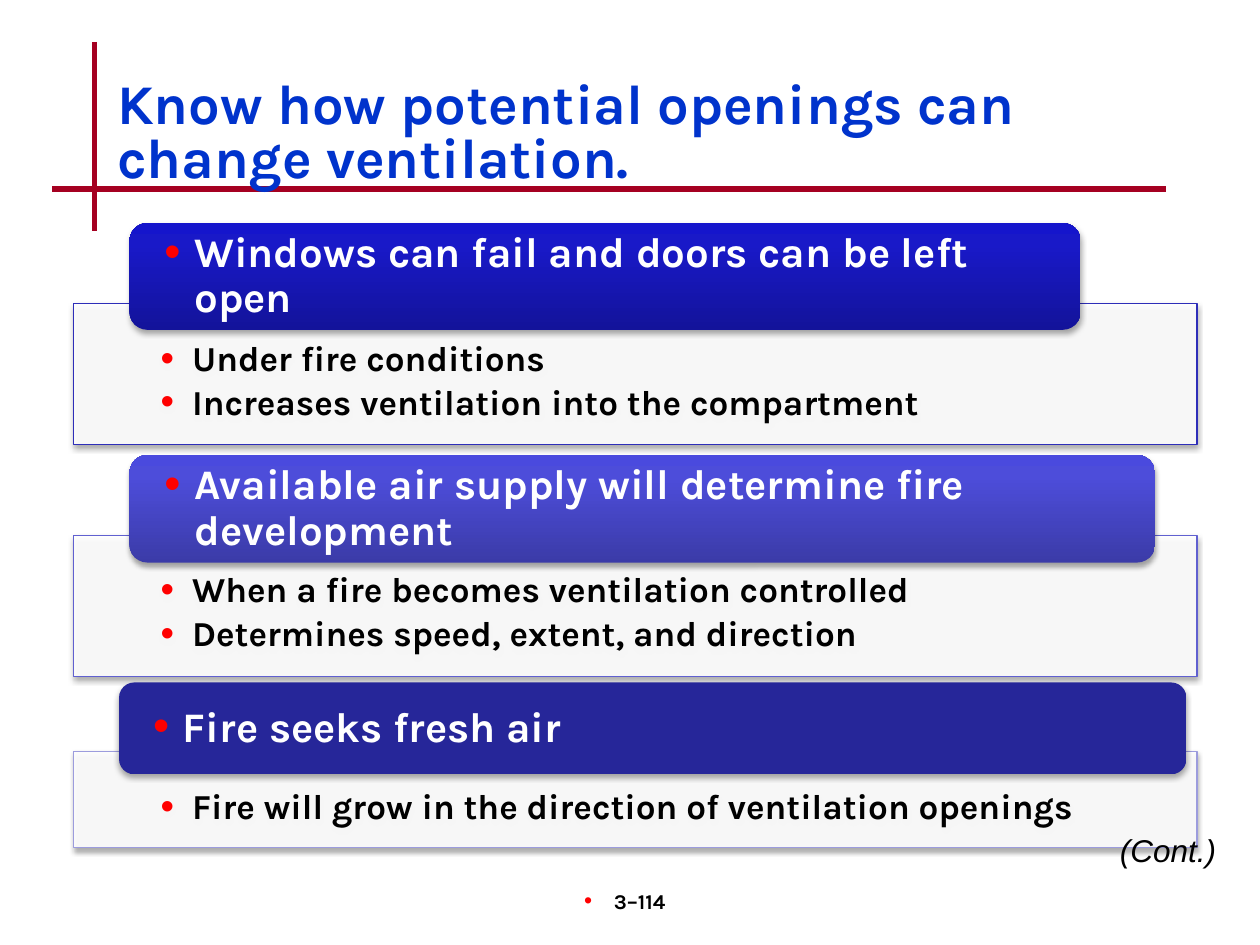
from lxml import etree
from pptx import Presentation
from pptx.dml.color import RGBColor
from pptx.enum import shapes, text
from pptx.oxml import parse_xml
from pptx.oxml.ns import qn
from pptx.util import Pt

NS = 'xmlns:a="http://schemas.openxmlformats.org/drawingml/2006/main"'
RED, BLACK, WHITE = "FF0000", "000000", "FFFFFF"
PANEL_LEFT, PANEL_WIDTH = 42, 642

TITLE = "Know how potential openings can change ventilation."
RULES = [(54, 24, 54, 132), (30, 108, 666, 108)]
SECTIONS = [
    {"heading": "Windows can fail and doors can be left open",
     "points": ["Under fire conditions", "Increases ventilation into the compartment"],
     "bar": (74, 127.5, 543.5, 61), "panel": (173.5, 80.5), "line": "2E2EB9",
     "fill": [(0, "13139A"), (80, "1919C8"), (100, "1515CC")]},
    {"heading": "Available air supply will determine fire development",
     "points": ["When a fire becomes ventilation controlled",
                "Determines speed, extent, and direction"],
     "bar": (74, 260, 586, 61.5), "panel": (306, 80.5), "line": "6060D0",
     "fill": [(0, "3B3BA8"), (80, "4D4DDA"), (100, "4A4ADE")]},
    {"heading": "Fire seeks fresh air",
     "points": ["Fire will grow in the direction of ventilation openings"],
     "bar": (68, 390, 610, 52.5), "panel": (429.5, 55), "line": "9C9CDD",
     "fill": [(0, "262699"), (100, "262699")]},
]

HEADING = {"size": Pt(24), "bold": True, "name": "Karla", "color": WHITE}
POINT = {"size": Pt(20), "bold": True, "name": "Karla", "color": BLACK}
TITLE_FONT = {"size": Pt(32), "bold": True, "name": "Karla", "color": "0033CC"}
NUMBER = {"size": Pt(12), "bold": True, "name": "Karla", "color": BLACK}
CONTINUED = {"size": Pt(18), "italic": True, "name": "Arial", "color": BLACK}


def color(value):
    return RGBColor.from_string(value)


def points(values):
    return [Pt(value) for value in values]


def add_bullet(para, hang):
    props = para._p.get_or_add_pPr()
    props.set("marL", str(Pt(hang)))
    props.set("indent", str(-Pt(hang)))
    for xml in (f'<a:buClr {NS}><a:srgbClr val="{RED}"/></a:buClr>',
                f'<a:buSzPct {NS} val="110000"/>',
                f'<a:buFont {NS} typeface="Arial"/>',
                f'<a:buChar {NS} char="•"/>'):
        props.append(parse_xml(xml))


def write(box, lines, font, margins=(7.2, 3.6, 7.2, 3.6), hang=0, anchor="TOP", **layout):
    frame = box.text_frame
    frame.word_wrap = True
    frame.vertical_anchor = getattr(text.MSO_ANCHOR, anchor)
    for side, margin in zip(("left", "top", "right", "bottom"), margins):
        setattr(frame, f"margin_{side}", Pt(margin))
    for index, line in enumerate(lines):
        para = frame.add_paragraph() if index else frame.paragraphs[0]
        for name, value in layout.items():
            setattr(para, name, value)
        if hang:
            add_bullet(para, hang)
        span = para.add_run()
        span.text = line
        for name, value in font.items():
            if name == "color":
                span.font.color.rgb = color(value)
            else:
                setattr(span.font, name, value)


def add_shadow(shape):
    shape._element.spPr.append(parse_xml(
        f'<a:effectLst {NS}><a:outerShdw blurRad="{Pt(3.1)}" dist="{Pt(1.8)}" '
        f'dir="5400000" rotWithShape="0"><a:srgbClr val="{BLACK}">'
        '<a:alpha val="35000"/></a:srgbClr></a:outerShdw></a:effectLst>'))


def add_panel(page, section):
    top, height = section["panel"]
    panel = page.shapes.add_shape(
        shapes.MSO_SHAPE.RECTANGLE, *points((PANEL_LEFT, top, PANEL_WIDTH, height)))
    panel.fill.solid()
    panel.fill.fore_color.rgb = color(WHITE)
    tint = panel._element.spPr.find(qn("a:solidFill"))[0]
    etree.SubElement(tint, qn("a:alpha")).set("val", "90000")
    panel.line.color.rgb = color(section["line"])
    panel.line.width = Pt(0.75)
    add_shadow(panel)
    write(panel, section["points"], POINT, (49.8, 21.3, 49.8, 11.5), 18,
          alignment=text.PP_ALIGN.LEFT, line_spacing=0.9, space_after=Pt(3.5))


def add_bar(page, section):
    bar = page.shapes.add_shape(shapes.MSO_SHAPE.ROUNDED_RECTANGLE, *points(section["bar"]))
    stops = "".join(f'<a:gs pos="{place * 1000}"><a:srgbClr val="{shade}"/></a:gs>'
                    for place, shade in section["fill"])
    bar._element.spPr.append(parse_xml(
        f'<a:gradFill {NS} rotWithShape="1"><a:gsLst>{stops}</a:gsLst>'
        '<a:lin ang="16200000" scaled="0"/></a:gradFill>'))
    bar.line.fill.background()
    add_shadow(bar)
    write(bar, [section["heading"]], HEADING, (17, 0, 17, 0), 17, "MIDDLE",
          alignment=text.PP_ALIGN.LEFT, line_spacing=0.9)


def add_text(page, place, line, font, **layout):
    write(page.shapes.add_textbox(*points(place)), [line], font, **layout)


def main():
    deck = Presentation()
    deck.slide_width, deck.slide_height = Pt(720), Pt(540)
    page = deck.slides.add_slide(deck.slide_layouts[6])
    for ends in RULES:
        rule = page.shapes.add_connector(shapes.MSO_CONNECTOR.STRAIGHT, *points(ends))
        rule.line.color.rgb = color("A50021")
        rule.line.width = Pt(3)
        etree.SubElement(rule._element.spPr, qn("a:effectLst"))
    add_text(page, (282, 504, 150, 36), "3–114", NUMBER, hang=17,
             alignment=text.PP_ALIGN.CENTER)
    add_text(page, (60, 39.5, 612, 72), TITLE, TITLE_FONT, anchor="BOTTOM", line_spacing=0.8)
    for section in SECTIONS:
        add_panel(page, section)
        add_bar(page, section)
    add_text(page, (582, 471.5, 120, 29), "(Cont.)", CONTINUED,
             alignment=text.PP_ALIGN.RIGHT)
    deck.save("out.pptx")


if __name__ == "__main__":
    main()
